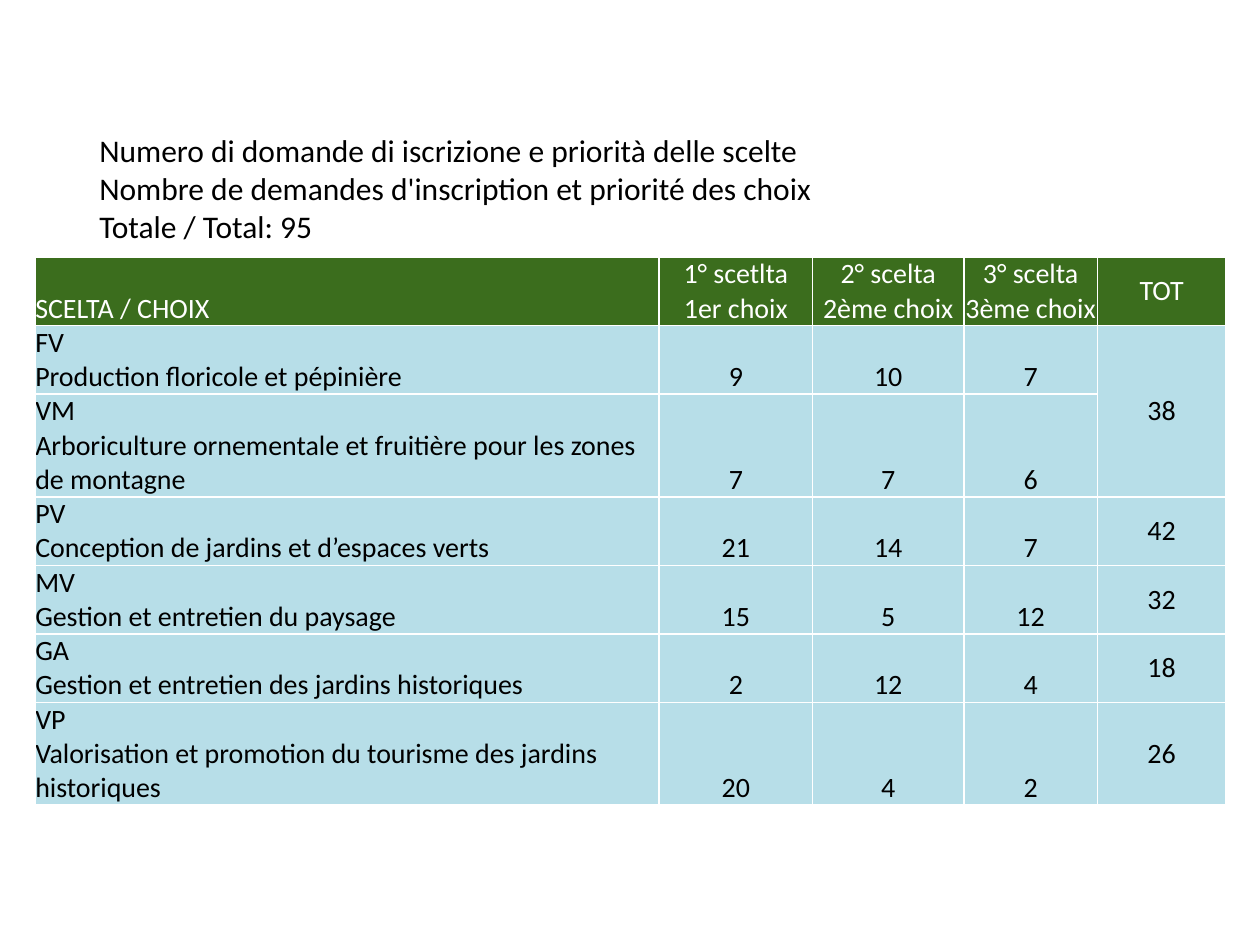
from dataclasses import dataclass

from lxml.etree import SubElement
from pptx import Presentation
from pptx.dml.color import RGBColor
from pptx.enum.text import MSO_ANCHOR, MSO_AUTO_SIZE, PP_ALIGN
from pptx.oxml.ns import qn
from pptx.util import Inches, Pt

COLORS = {"header": "3B6D1D", "body": "B7DEE8", "border": "FFFFFF",
          "light": "FFFFFF", "dark": "000000"}
FONT = "Calibri"
COLUMN_WIDTHS = (4.95, 1.22, 1.2, 1.06, 1.02)
ROW_HEIGHT = 0.53
HEADING = (
    "Numero di domande di iscrizione e priorità delle scelte",
    "Nombre de demandes d'inscription et priorité des choix",
    "Totale / Total: 95",
)
COLUMN_TITLES = (
    ("SCELTA / CHOIX",),
    ("1° scetlta", "1er choix"),
    ("2° scelta", "2ème choix"),
    ("3° scelta", "3ème choix"),
    ("TOT",),
)


@dataclass(frozen=True)
class Course:
    """A course with its applications by priority and their total."""
    code: str
    title: str
    choices: tuple[int, int, int]
    total: str

    def cells(self) -> tuple[tuple[str, ...], ...]:
        """Return the lines of each cell in the course's row."""
        counts = tuple((str(count),) for count in self.choices)
        return ((self.code, self.title), *counts, (self.total,))


COURSES = (
    Course("FV", "Production floricole et pépinière", (9, 10, 7), "38"),
    Course("VM", "Arboriculture ornementale et fruitière pour les zones de montagne",
           (7, 7, 6), ""),
    Course("PV", "Conception de jardins et d’espaces verts", (21, 14, 7), "42"),
    Course("MV", "Gestion et entretien du paysage", (15, 5, 12), "32"),
    Course("GA", "Gestion et entretien des jardins historiques", (2, 12, 4), "18"),
    Course("VP", "Valorisation et promotion du tourisme des jardins historiques",
           (20, 4, 2), "26"),
)


def write_lines(frame, lines: tuple[str, ...], size: int, color: str,
                align: PP_ALIGN = PP_ALIGN.LEFT) -> None:
    """Write each line as a paragraph of the text frame."""
    for index, line in enumerate(lines):
        paragraph = frame.add_paragraph() if index else frame.paragraphs[0]
        paragraph.alignment = align
        paragraph.font.size = Pt(size)
        if not line:
            continue
        run = paragraph.add_run()
        run.text = line
        run.font.name = FONT
        run.font.size = Pt(size)
        run.font.color.rgb = RGBColor.from_string(COLORS[color])


def add_borders(cell) -> None:
    """Draw a thin line on all four sides of a cell."""
    properties = cell._tc.get_or_add_tcPr()
    for side in ("a:lnL", "a:lnR", "a:lnT", "a:lnB"):
        line = SubElement(properties, qn(side), w=str(Pt(1)))
        fill = SubElement(line, qn("a:solidFill"))
        SubElement(fill, qn("a:srgbClr"), val=COLORS["border"])


def fill_cell(cell, lines: tuple[str, ...], column: int, is_header: bool) -> None:
    """Style a cell by its column and row kind and write its lines."""
    is_total = column == len(COLUMN_WIDTHS) - 1
    cell.margin_left = cell.margin_right = Inches(0)
    cell.margin_top = cell.margin_bottom = Inches(0)
    cell.vertical_anchor = MSO_ANCHOR.MIDDLE if is_total else MSO_ANCHOR.BOTTOM
    add_borders(cell)
    cell.fill.solid()
    cell.fill.fore_color.rgb = RGBColor.from_string(
        COLORS["header" if is_header else "body"])
    write_lines(cell.text_frame, lines, 16, "light" if is_header else "dark",
                PP_ALIGN.CENTER if column else PP_ALIGN.LEFT)


def add_applications(slide) -> None:
    """Add the table of applications by course and priority."""
    rows = (COLUMN_TITLES, *(course.cells() for course in COURSES))
    applications = slide.shapes.add_table(
        len(rows), len(COLUMN_WIDTHS), Inches(0.28), Inches(2.04),
        Inches(sum(COLUMN_WIDTHS)), Inches(ROW_HEIGHT * len(rows))).table
    for column, width in zip(applications.columns, COLUMN_WIDTHS):
        column.width = Inches(width)
    for row_index, row in enumerate(rows):
        applications.rows[row_index].height = Inches(ROW_HEIGHT)
        for column_index, lines in enumerate(row):
            fill_cell(applications.cell(row_index, column_index), lines,
                      column_index, row_index == 0)
    applications.cell(1, 4).merge(applications.cell(2, 4))


def add_heading(slide) -> None:
    """Add the heading above the table."""
    frame = slide.shapes.add_textbox(
        Inches(0.69), Inches(0.99), Inches(8.38), Inches(1.01)).text_frame
    frame.word_wrap = True
    frame.auto_size = MSO_AUTO_SIZE.SHAPE_TO_FIT_TEXT
    write_lines(frame, HEADING, 18, "dark")


def main() -> None:
    """Build and save the slide."""
    presentation = Presentation()
    presentation.slide_width = Inches(10)
    presentation.slide_height = Inches(7.5)
    slide = presentation.slides.add_slide(presentation.slide_layouts[6])
    add_applications(slide)
    add_heading(slide)
    presentation.save("out.pptx")


if __name__ == "__main__":
    main()
